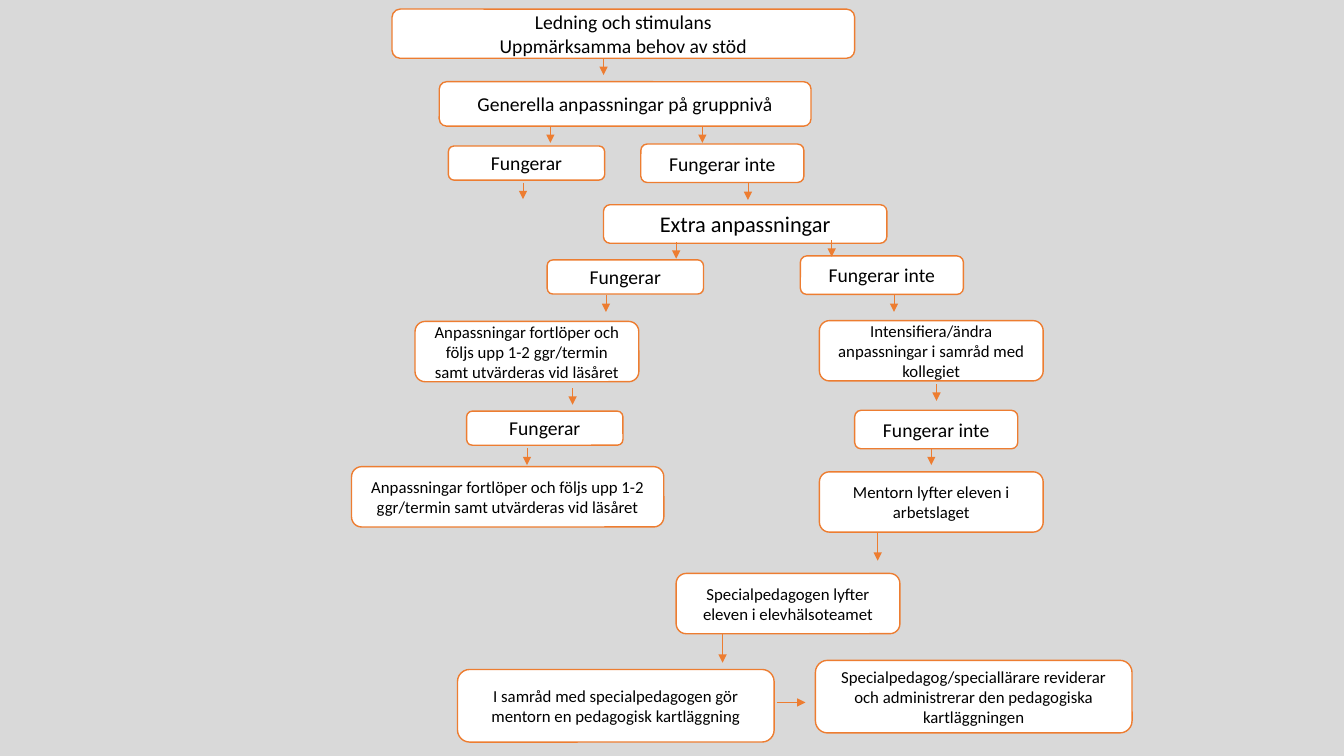
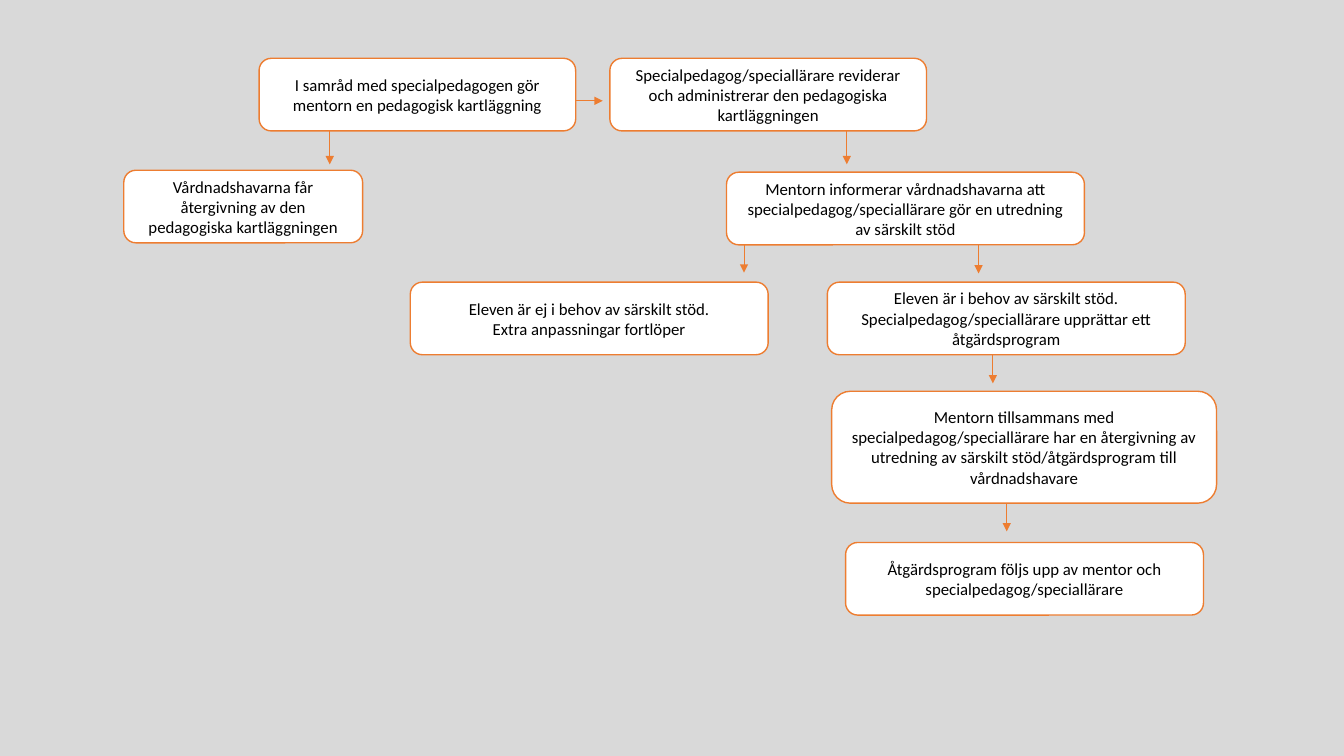
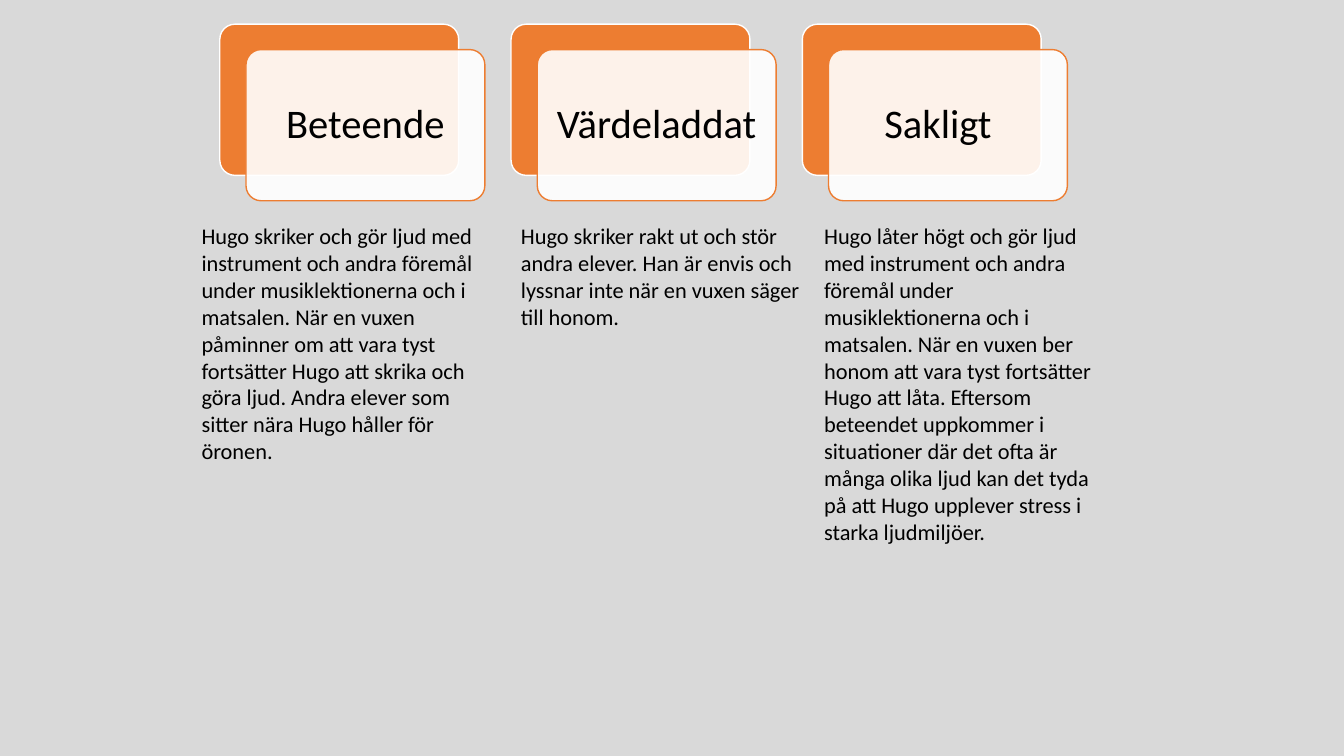
from dataclasses import dataclass

from lxml import etree
from pptx import Presentation
from pptx.dml.color import RGBColor
from pptx.enum import shapes, text
from pptx.oxml import ns
from pptx.util import Cm, Pt


@dataclass(frozen=True)
class Theme:
    background: RGBColor = RGBColor(0xD9, 0xD9, 0xD9)
    accent: RGBColor = RGBColor(0xED, 0x7D, 0x31)
    paper: RGBColor = RGBColor(0xFF, 0xFF, 0xFF)
    ink: RGBColor = RGBColor(0x00, 0x00, 0x00)
    font: str = "Calibri"
    step: int = 12
    stage: int = 14
    body: int = 16
    heading: int = 29
    outline: float = 1
    arrow: float = 0.5


theme = Theme()


def write(shape, content, size=theme.step, align=text.PP_ALIGN.CENTER,
          anchor=text.MSO_ANCHOR.MIDDLE, spacing=None, sides=(0.25, 0.25), grow=False):
    """Fill a shape with text; each line of the content is a paragraph."""
    frame = shape.text_frame
    frame.word_wrap = True
    frame.vertical_anchor = anchor
    frame.margin_left, frame.margin_right = (Cm(side) for side in sides)
    if grow:
        frame.auto_size = text.MSO_AUTO_SIZE.SHAPE_TO_FIT_TEXT
    frame.text = content
    for paragraph in frame.paragraphs:
        paragraph.alignment = align
        paragraph.line_spacing = spacing
        font = paragraph.runs[0].font
        font.name, font.size, font.color.rgb = theme.font, Pt(size), theme.ink


def add_panel(slide, left, top, width, height, fill=theme.paper, line=theme.accent):
    """Add an outlined rounded rectangle."""
    panel = slide.shapes.add_shape(shapes.MSO_SHAPE.ROUNDED_RECTANGLE,
                                   Cm(left), Cm(top), Cm(width), Cm(height))
    panel.shadow.inherit = False
    panel.fill.solid()
    panel.fill.fore_color.rgb = fill
    panel.line.color.rgb = line
    panel.line.width = Pt(theme.outline)
    return panel


# Presentation with a shared background
prs = Presentation()
prs.slide_width, prs.slide_height = Cm(33.87), Cm(19.05)
prs.slide_master.background.fill.solid()
prs.slide_master.background.fill.fore_color.rgb = theme.background
blank = prs.slide_layouts[6]

# Recurring box sizes (width, height) and wordings
WORKS, FAILS = (3.94, 0.86), (4.11, 0.97)
STEP, SURVEY, DECISION = (5.64, 1.52), (7.98, 1.83), (9.02, 1.83)
follow_up = "Anpassningar fortlöper och följs upp 1-2 ggr/termin samt utvärderas vid läsåret"
mapping = "I samråd med specialpedagogen gör mentorn en pedagogisk kartläggning"
review = ("Specialpedagog/speciallärare reviderar och administrerar "
          "den pedagogiska kartläggningen")

# Flow charts: boxes are (left, top, size, wording, type size),
# arrows are (left, top, run across, run down)
support_boxes = [
    (9.88, 0.23, (11.66, 1.24), "Ledning och stimulans\nUppmärksamma behov av stöd", theme.stage),
    (11.07, 2.06, (9.37, 1.12), "Generella anpassningar på gruppnivå", theme.stage),
    (15.21, 5.16, (7.14, 0.97), "Extra anpassningar", theme.body),
    (10.46, 8.1, STEP, follow_up, theme.step),
    (20.65, 8.08, STEP, "Intensifiera/ändra anpassningar i samråd med kollegiet", theme.step),
    (8.86, 11.76, (7.87, 1.52), follow_up, theme.step),
    (20.65, 11.89, STEP, "Mentorn lyfter eleven i arbetslaget", theme.step),
    (17.04, 14.45, STEP, "Specialpedagogen lyfter eleven i elevhälsoteamet", theme.step),
    (11.53, 16.87, SURVEY, mapping, theme.step),
    (20.55, 16.64, SURVEY, review, theme.step),
]
for left, top in [(11.3, 3.68), (13.79, 6.55), (11.76, 10.36)]:
    support_boxes.append((left, top, WORKS, "Fungerar", theme.stage))
for left, top in [(16.15, 3.63), (20.17, 6.45), (21.54, 10.34)]:
    support_boxes.append((left, top, FAILS, "Fungerar inte", theme.stage))

support_arrows = [(left, top, 0, 0.42) for left, top in [
    (15.21, 1.47), (13.87, 3.18), (17.7, 3.18), (13.18, 4.6), (18.85, 4.62),
    (17.04, 6.1), (20.96, 6.05), (15.27, 7.44), (22.53, 7.44), (14.43, 9.78),
    (23.6, 9.68), (13.28, 11.3), (23.47, 11.3)]]
support_arrows += [(22.12, 13.41, 0, 0.72), (18.21, 15.98, 0, 0.72), (19.58, 17.7, 0.72, 0)]

inquiry_boxes = [
    (6.53, 1.47, SURVEY, mapping, theme.step),
    (15.37, 1.47, SURVEY, review, theme.step),
    (3.12, 4.29, (6.02, 1.83),
     "Vårdnadshavarna får återgivning av den pedagogiska kartläggningen", theme.step),
    (18.31, 4.34, DECISION, "Mentorn informerar vårdnadshavarna att "
     "specialpedagog/speciallärare gör en utredning av särskilt stöd", theme.step),
    (10.34, 7.11, DECISION,
     "Eleven är ej i behov av särskilt stöd.\nExtra anpassningar fortlöper", theme.step),
    (20.85, 7.11, DECISION, "Eleven är i behov av särskilt stöd.\n"
     "Specialpedagog/speciallärare upprättar ett åtgärdsprogram", theme.step),
    (20.96, 9.86, (9.7, 2.82), "Mentorn tillsammans med specialpedagog/speciallärare har en "
     "återgivning av utredning av särskilt stöd/åtgärdsprogram till vårdnadshavare", theme.step),
    (21.31, 13.67, DECISION,
     "Åtgärdsprogram följs upp av mentor och specialpedagog/speciallärare", theme.step),
]
inquiry_arrows = [(8.31, 3.3, 0, 0.84), (21.34, 3.3, 0, 0.84), (14.5, 2.54, 0.69, 0)]
inquiry_arrows += [(left, top, 0, 0.72) for left, top in [
    (18.75, 6.15), (24.66, 6.17), (25.02, 8.94), (25.37, 12.67)]]

for boxes, arrows in [(support_boxes, support_arrows), (inquiry_boxes, inquiry_arrows)]:
    flow = prs.slides.add_slide(blank)
    for left, top, (width, height), wording, size in boxes:
        write(add_panel(flow, left, top, width, height), wording, size=size)
    for left, top, across, down in arrows:
        arrow = flow.shapes.add_connector(shapes.MSO_CONNECTOR.STRAIGHT, Cm(left), Cm(top),
                                          Cm(left + across), Cm(top + down))
        arrow.line.color.rgb = theme.accent
        arrow.line.width = Pt(theme.arrow)
        etree.SubElement(arrow.line._get_or_add_ln(), ns.qn("a:tailEnd"), type="triangle")
        etree.SubElement(arrow._element.spPr, ns.qn("a:effectLst"))

# Three ways to describe: layered card above a description
# (heading, right inset, description left, description height, description)
descriptions = [
    ("Beteende", 0.1, 4.83, 6.4,
     "Hugo skriker och gör ljud med instrument och andra föremål under musiklektionerna "
     "och i matsalen. När en vuxen påminner om att vara tyst fortsätter Hugo att skrika "
     "och göra ljud. Andra elever som sitter nära Hugo håller för öronen."),
    ("Värdeladdat", 0.1, 12.88, 3,
     "Hugo skriker rakt ut och stör andra elever. Han är envis och lyssnar inte när en "
     "vuxen säger till honom."),
    ("Sakligt", 0.6, 20.52, 8.46,
     "Hugo låter högt och gör ljud med instrument och andra föremål under musiklektionerna "
     "och i matsalen. När en vuxen ber honom att vara tyst fortsätter Hugo att låta. "
     "Eftersom beteendet uppkommer i situationer där det ofta är många olika ljud kan det "
     "tyda på att Hugo upplever stress i starka ljudmiljöer."),
]
card_left, card_top, card_pitch = 5.54, 0.61, 7.34
card_size = (6.02, 3.81)

comparison = prs.slides.add_slide(blank)
for index, (heading, right_inset, left, height, description) in enumerate(descriptions):
    back_left = card_left + index * card_pitch
    back = add_panel(comparison, back_left, card_top, *card_size,
                     fill=theme.accent, line=theme.paper)
    front = add_panel(comparison, back_left + 0.66, card_top + 0.64, *card_size)
    back.adjustments[0] = front.adjustments[0] = 0.1
    front_colour = front._element.spPr.find(ns.qn("a:solidFill"))[0]
    etree.SubElement(front_colour, ns.qn("a:alpha"), val="90000")
    write(front, heading, size=theme.heading, spacing=0.9, sides=(0.1, right_inset))

    account = comparison.shapes.add_textbox(Cm(left), Cm(5.48), Cm(7.62), Cm(height))
    write(account, description, size=theme.body, align=text.PP_ALIGN.LEFT,
          anchor=text.MSO_ANCHOR.TOP, grow=True)

prs.save("out.pptx")
